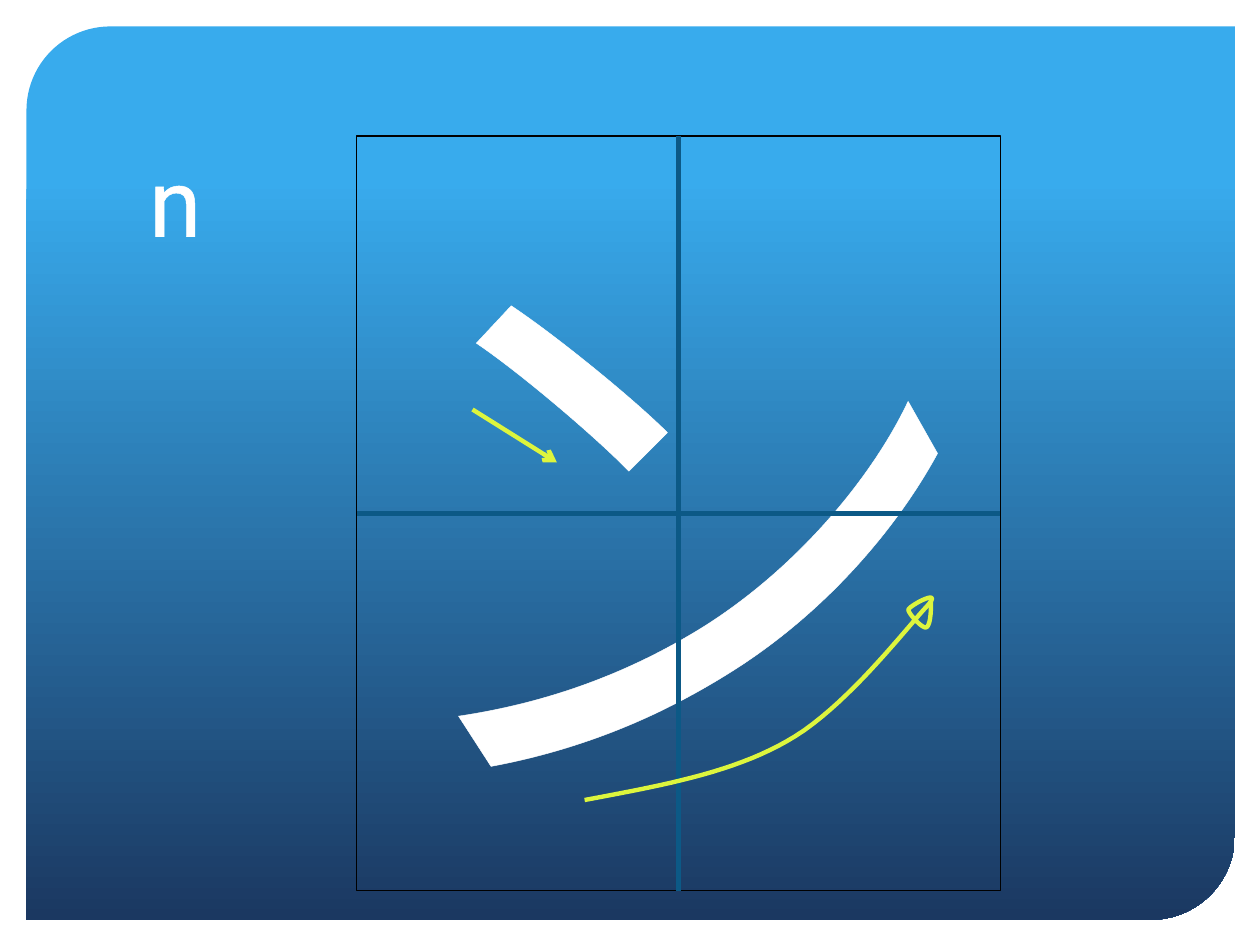
from dataclasses import dataclass

from lxml.etree import SubElement
from pptx import Presentation
from pptx.dml.color import RGBColor
from pptx.enum.shapes import MSO_CONNECTOR, MSO_SHAPE
from pptx.enum.text import MSO_ANCHOR, MSO_AUTO_SIZE, PP_ALIGN
from pptx.oxml.ns import qn
from pptx.util import Inches, Pt


@dataclass(frozen=True)
class Theme:
    sky: RGBColor = RGBColor.from_string("38ABED")
    navy: RGBColor = RGBColor.from_string("1B3861")
    guide: RGBColor = RGBColor.from_string("0C5986")
    stroke: RGBColor = RGBColor.from_string("DDF53D")
    frame: RGBColor = RGBColor.from_string("000000")
    text: RGBColor = RGBColor.from_string("FFFFFF")
    font: str = "Roboto"
    kana_size: int = 350
    sound_size: int = 54
    line_width: float = 2.5
    frame_width: float = 0.75
    outline_width: float = 1.45


THEME = Theme()
FRAME = (2.83, 1.08, 5.11, 5.99)
STROKE_START = (4.64, 6.35)
# Each curve: first control point, second control point, end point
STROKE_CURVES = [
    ((5.22, 6.24), (5.8, 6.14), (6.25, 5.88)),
    ((6.7, 5.63), (7.19, 4.99), (7.35, 4.82)),
    ((7.51, 4.65), (7.21, 4.81), (7.21, 4.84)),
    ((7.21, 4.87), (7.32, 4.99), (7.35, 4.98)),
    ((7.38, 4.97), (7.39, 4.88), (7.39, 4.78)),
]


def style_line(line, color, width):
    line.color.rgb = color
    line.width = Pt(width)


def add_preset(slide, preset, box):
    shape = slide.shapes.add_shape(preset, *map(Inches, box))
    shape.shadow.inherit = False
    return shape


def add_panel(slide):
    panel = add_preset(slide, MSO_SHAPE.ROUND_2_DIAG_RECTANGLE, (0.21, 0.21, 9.59, 7.09))
    panel.adjustments[0] = 0.094
    panel.adjustments[1] = 0
    panel.line.fill.background()
    panel.fill.gradient()
    panel.fill.gradient_angle = 270
    stops = [(0.17, THEME.sky), (1, THEME.navy)]
    for stop, (position, color) in zip(panel.fill.gradient_stops, stops):
        stop.position = position
        stop.color.rgb = color


def write_letter(shape, letter, size):
    """Centre one outlined letter in the shape."""
    frame = shape.text_frame
    frame.word_wrap = False
    frame.auto_size = MSO_AUTO_SIZE.SHAPE_TO_FIT_TEXT
    paragraph = frame.paragraphs[0]
    paragraph.alignment = PP_ALIGN.CENTER
    run = paragraph.add_run()
    run.text = letter
    font = run.font
    font.size = Pt(size)
    font.name = THEME.font
    font.color.rgb = THEME.text
    properties = run._r.get_or_add_rPr()
    outline = SubElement(properties, qn("a:ln"), w=str(Pt(THEME.outline_width)))
    fill = SubElement(outline, qn("a:solidFill"))
    SubElement(fill, qn("a:srgbClr"), val=str(THEME.text))
    properties.insert(0, outline)
    east_asian = SubElement(properties, qn("a:ea"), typeface=THEME.font)
    properties.find(qn("a:latin")).addnext(east_asian)


def add_kana(slide, kana):
    cell = add_preset(slide, MSO_SHAPE.RECTANGLE, FRAME)
    cell.fill.background()
    style_line(cell.line, THEME.frame, THEME.frame_width)
    cell.text_frame.vertical_anchor = MSO_ANCHOR.TOP
    write_letter(cell, kana, THEME.kana_size)


def add_sound(slide, sound):
    label = slide.shapes.add_textbox(*map(Inches, (1.08, 1.08, 0.62, 1.01)))
    write_letter(label, sound, THEME.sound_size)


def add_line(slide, start, end, color, arrow=False):
    connector = slide.shapes.add_connector(
        MSO_CONNECTOR.STRAIGHT, *map(Inches, (*start, *end)))
    style_line(connector.line, color, THEME.line_width)
    if arrow:
        SubElement(connector.line._get_or_add_ln(), qn("a:tailEnd"), type="arrow")
    SubElement(connector._element.spPr, qn("a:effectLst"))


def add_guides(slide):
    left, top, width, height = FRAME
    middle_x, middle_y = left + width / 2, top + height / 2
    add_line(slide, (left, middle_y), (left + width, middle_y), THEME.guide)
    add_line(slide, (middle_x, top), (middle_x, top + height), THEME.guide)


def curve_points(start, curves, steps=20):
    """Yield points, in EMU, along a chain of cubic Bézier curves."""
    for first, second, end in curves:
        for step in range(1, steps + 1):
            t = step / steps
            u = 1 - t
            yield tuple(
                Inches(u**3 * a + 3 * u * u * t * b + 3 * u * t * t * c + t**3 * d)
                for a, b, c, d in zip(start, first, second, end))
        start = end


def add_curved_stroke(slide):
    builder = slide.shapes.build_freeform(*map(Inches, STROKE_START))
    builder.add_line_segments(curve_points(STROKE_START, STROKE_CURVES), close=False)
    curve = builder.convert_to_shape()
    curve.shadow.inherit = False
    curve.fill.background()
    style_line(curve.line, THEME.stroke, THEME.line_width)


def main():
    deck = Presentation()
    deck.slide_width, deck.slide_height = Inches(10), Inches(7.5)
    slide = deck.slides.add_slide(deck.slide_layouts[6])
    add_panel(slide)
    add_kana(slide, "ン")
    add_guides(slide)
    add_sound(slide, "n")
    add_line(slide, (3.75, 3.25), (4.42, 3.67), THEME.stroke, arrow=True)
    add_curved_stroke(slide)
    deck.save("out.pptx")


if __name__ == "__main__":
    main()
